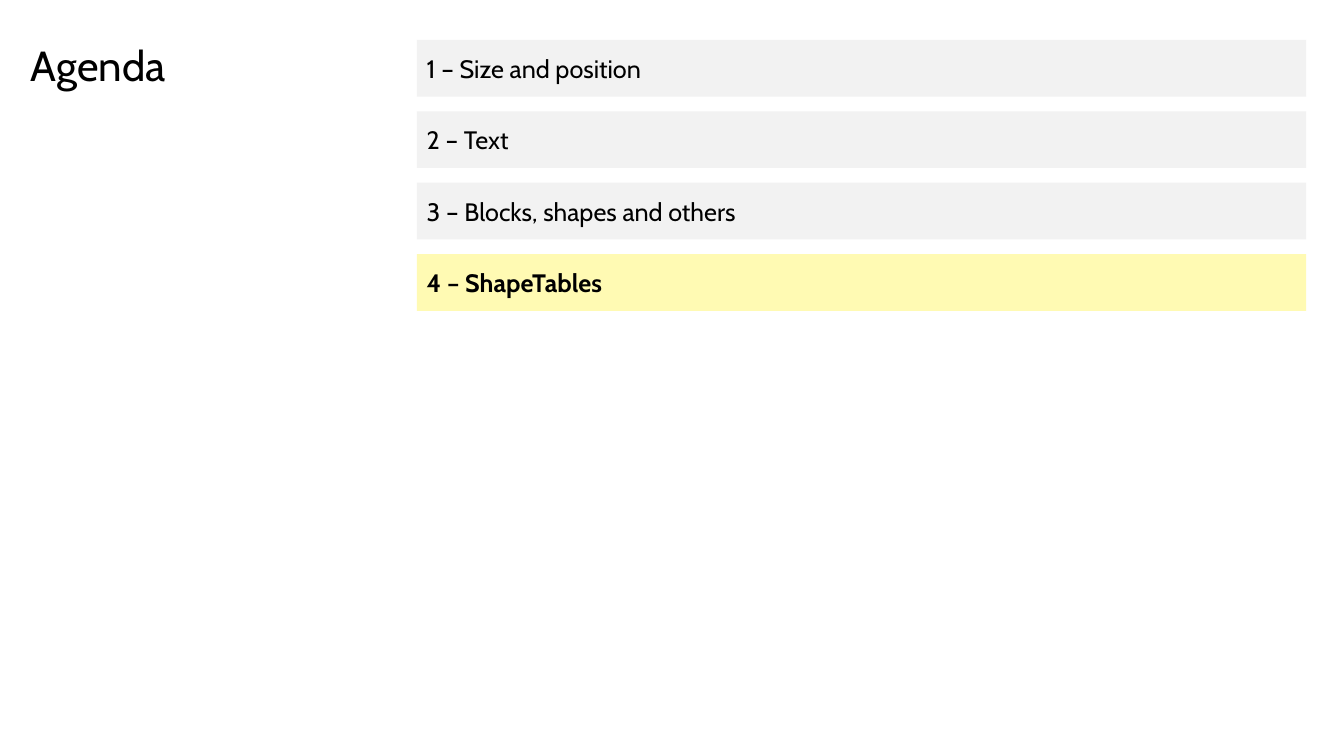
from dataclasses import dataclass

from pptx import Presentation
from pptx.dml.color import RGBColor
from pptx.enum.shapes import MSO_SHAPE
from pptx.enum.text import MSO_ANCHOR as Anchor, PP_ALIGN as Align
from pptx.slide import Slide
from pptx.text.text import TextFrame
from pptx.util import Emu, Pt

EMU_PER_PX = 9525
FONT = "Cabin"
COLOURS = {
    "text": "000000",
    "topic": "F2F2F2",
    "current": "FFFAB3",
}

# Agenda column: equal bars at a fixed pitch
TOP = 38
BAR_LEFT, BAR_WIDTH, BAR_HEIGHT, BAR_PITCH = 397, 847, 54, 68


@dataclass(frozen=True)
class Topic:
    title: str
    current: bool = False


TOPICS = [
    Topic("Size and position"),
    Topic("Text"),
    Topic("Blocks, shapes and others"),
    Topic("ShapeTables", current=True),
]


def px(length: int) -> Emu:
    return Emu(length * EMU_PER_PX)


def colour(name: str) -> RGBColor:
    return RGBColor.from_string(COLOURS[name])


def write(frame: TextFrame, text: str, *, size: int, bold: bool = False,
          anchor: Anchor = Anchor.TOP, line_spacing: float = 1.0) -> None:
    frame.word_wrap = True
    frame.vertical_anchor = anchor
    paragraph = frame.paragraphs[0]
    paragraph.alignment = Align.LEFT
    paragraph.line_spacing = line_spacing
    run = paragraph.add_run()
    run.text = text
    run.font.name = FONT
    run.font.size = Pt(size)
    run.font.bold = bold
    run.font.color.rgb = colour("text")


def draw_heading(slide: Slide, text: str) -> None:
    heading = slide.shapes.add_textbox(px(20), px(TOP), px(391), px(BAR_HEIGHT))
    write(heading.text_frame, text, size=30, line_spacing=0.9)


def draw_topic(slide: Slide, topic: Topic, number: int) -> None:
    top = TOP + (number - 1) * BAR_PITCH
    bar = slide.shapes.add_shape(MSO_SHAPE.RECTANGLE, px(BAR_LEFT), px(top),
                                 px(BAR_WIDTH), px(BAR_HEIGHT))
    bar.shadow.inherit = False
    bar.fill.solid()
    bar.fill.fore_color.rgb = colour("current" if topic.current else "topic")
    bar.line.fill.background()
    write(bar.text_frame, f"{number} – {topic.title}", size=18,
          bold=topic.current, anchor=Anchor.MIDDLE)


def main() -> None:
    deck = Presentation()
    deck.slide_width, deck.slide_height = px(1280), px(720)
    slide = deck.slides.add_slide(deck.slide_layouts[6])

    # Heading on the left, topics on the right
    draw_heading(slide, "Agenda")
    for number, topic in enumerate(TOPICS, start=1):
        draw_topic(slide, topic, number)

    deck.save("out.pptx")


if __name__ == "__main__":
    main()
